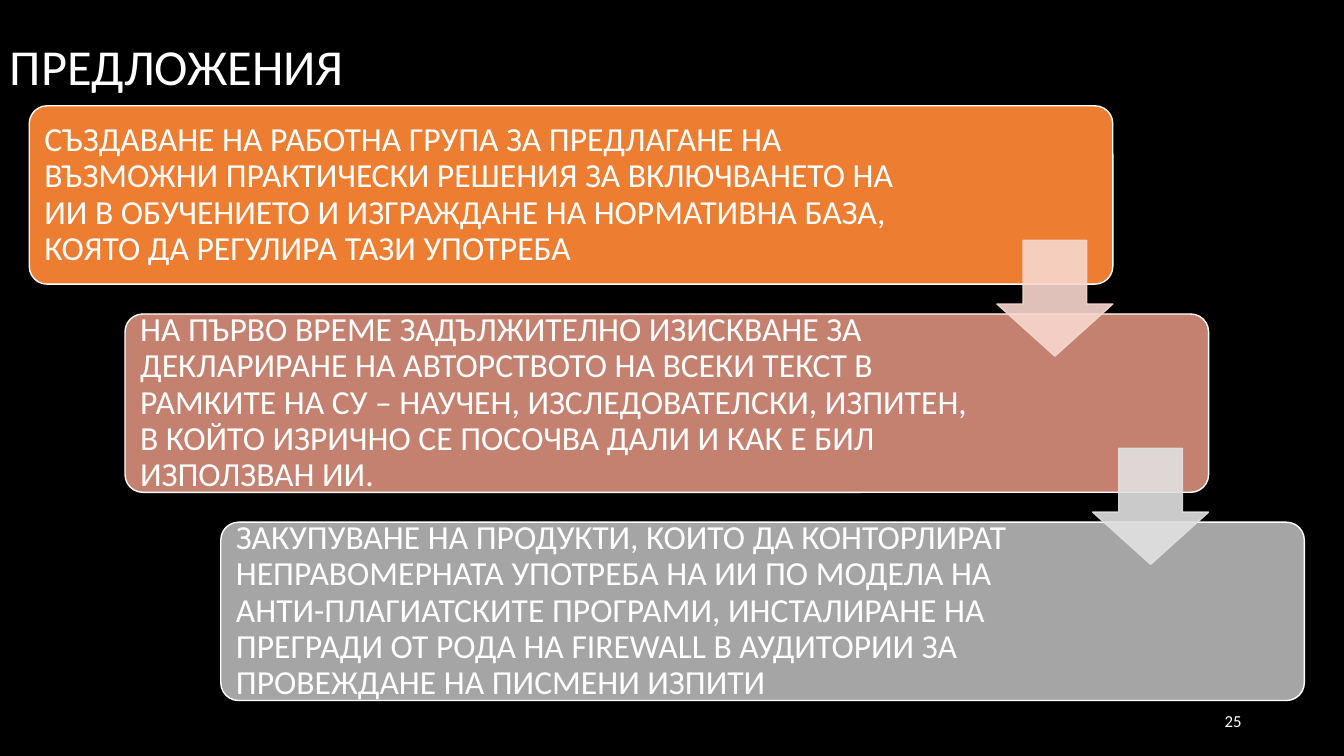
from lxml import etree
from pptx import Presentation
from pptx.dml.color import RGBColor
from pptx.enum.shapes import MSO_SHAPE
from pptx.enum.text import MSO_ANCHOR, PP_ALIGN
from pptx.oxml.ns import qn
from pptx.util import Pt

ROUNDED, DOWN_ARROW = MSO_SHAPE.ROUNDED_RECTANGLE, MSO_SHAPE.DOWN_ARROW
TOP, MIDDLE = MSO_ANCHOR.TOP, MSO_ANCHOR.MIDDLE
LEFT, RIGHT = PP_ALIGN.LEFT, PP_ALIGN.RIGHT

BLACK = RGBColor(0x00, 0x00, 0x00)
WHITE = RGBColor(0xFF, 0xFF, 0xFF)
ORANGE = RGBColor(0xED, 0x7D, 0x31)
ROSE = RGBColor(0xC4, 0x81, 0x70)
GRAY = RGBColor(0xA5, 0xA5, 0xA5)
PALE_ROSE = RGBColor(0xF8, 0xD7, 0xCE)
PALE_GRAY = RGBColor(0xE1, 0xE1, 0xE1)
FONT = "Calibri"

# Content
TITLE = "ПРЕДЛОЖЕНИЯ"
PAGE_NUMBER = "25"
# (text, fill, right inset that keeps the text clear of the arrows)
PROPOSALS = [
    ("СЪЗДАВАНЕ НА РАБОТНА ГРУПА ЗА ПРЕДЛАГАНЕ НА ВЪЗМОЖНИ ПРАКТИЧЕСКИ "
     "РЕШЕНИЯ ЗА ВКЛЮЧВАНЕТО НА ИИ В ОБУЧЕНИЕТО И ИЗГРАЖДАНЕ НА НОРМАТИВНА "
     "БАЗА, КОЯТО ДА РЕГУЛИРА ТАЗИ УПОТРЕБА", ORANGE, 137),
    ("НА ПЪРВО ВРЕМЕ ЗАДЪЛЖИТЕЛНО ИЗИСКВАНЕ ЗА ДЕКЛАРИРАНЕ НА АВТОРСТВОТО НА "
     "ВСЕКИ ТЕКСТ В РАМКИТЕ НА СУ – НАУЧЕН, ИЗСЛЕДОВАТЕЛСКИ, ИЗПИТЕН, "
     "В КОЙТО ИЗРИЧНО СЕ ПОСОЧВА ДАЛИ И КАК Е БИЛ ИЗПОЛЗВАН ИИ.", ROSE, 158),
    ("ЗАКУПУВАНЕ НА ПРОДУКТИ, КОИТО ДА КОНТОРЛИРАТ НЕПРАВОМЕРНАТА УПОТРЕБА НА "
     "ИИ ПО МОДЕЛА НА АНТИ-ПЛАГИАТСКИТЕ ПРОГРАМИ, ИНСТАЛИРАНЕ НА ПРЕГРАДИ ОТ "
     "РОДА НА FIREWALL В АУДИТОРИИ ЗА ПРОВЕЖДАНЕ НА ПИСМЕНИ ИЗПИТИ", GRAY, 158),
]
ARROW_COLORS = [PALE_ROSE, PALE_GRAY]

# Staircase layout, in points
STEP_LEFT, STEP_TOP = 20.9, 75.6
STEP_WIDTH, STEP_HEIGHT = 774, 127.4
STEP_RIGHT, STEP_DOWN = 68.4, 148.7
STEP_INSET = 7.2
ARROW_SIZE, ARROW_DROP = 82.8, 96

prs = Presentation()
prs.slide_width, prs.slide_height = Pt(960), Pt(540)
slide = prs.slides.add_slide(prs.slide_layouts[6])
slide.background.fill.solid()
slide.background.fill.fore_color.rgb = BLACK


def write(shape, text, size, anchor, align=LEFT, spacing=1.0):
    frame = shape.text_frame
    frame.word_wrap = True
    frame.vertical_anchor = anchor
    paragraph = frame.paragraphs[0]
    paragraph.alignment = align
    paragraph.line_spacing = spacing
    run = paragraph.add_run()
    run.text = text
    run.font.name, run.font.size = FONT, Pt(size)
    run.font.color.rgb = WHITE
    return frame


def add_textbox(left, top, width, height):
    return slide.shapes.add_textbox(Pt(left), Pt(top), Pt(width), Pt(height))


def add_shape(kind, left, top, width, height, adjustments, fill, line):
    shape = slide.shapes.add_shape(kind, Pt(left), Pt(top), Pt(width), Pt(height))
    shape.shadow.inherit = False
    for i, value in enumerate(adjustments):
        shape.adjustments[i] = value
    shape.fill.solid()
    shape.fill.fore_color.rgb = fill
    shape.line.color.rgb = line
    shape.line.width = Pt(1)
    return shape


# Title
write(add_textbox(0, 26.6, 827.3, 85), TITLE, 36, TOP, spacing=0.9)

# Proposal steps
for i, (proposal, color, right_inset) in enumerate(PROPOSALS):
    step = add_shape(ROUNDED, STEP_LEFT + i * STEP_RIGHT, STEP_TOP + i * STEP_DOWN,
                     STEP_WIDTH, STEP_HEIGHT, [0.1], color, WHITE)
    frame = write(step, proposal, 24, MIDDLE, spacing=0.9)
    frame.margin_left = frame.margin_top = frame.margin_bottom = Pt(STEP_INSET)
    frame.margin_right = Pt(right_inset)

# Arrows, flush with the right edge of the step they leave
for i, color in enumerate(ARROW_COLORS):
    arrow = add_shape(DOWN_ARROW,
                      STEP_LEFT + i * STEP_RIGHT + STEP_WIDTH - ARROW_SIZE,
                      STEP_TOP + i * STEP_DOWN + ARROW_DROP,
                      ARROW_SIZE, ARROW_SIZE, [0.55, 0.45], color, color)
    # 90 % opacity for fill and line
    for srgb in arrow.element.spPr.iter(qn("a:srgbClr")):
        etree.SubElement(srgb, qn("a:alpha")).set("val", "90000")

# Page number
write(add_textbox(678, 500.5, 216, 28.8), PAGE_NUMBER, 12, MIDDLE, RIGHT)

prs.save("out.pptx")
